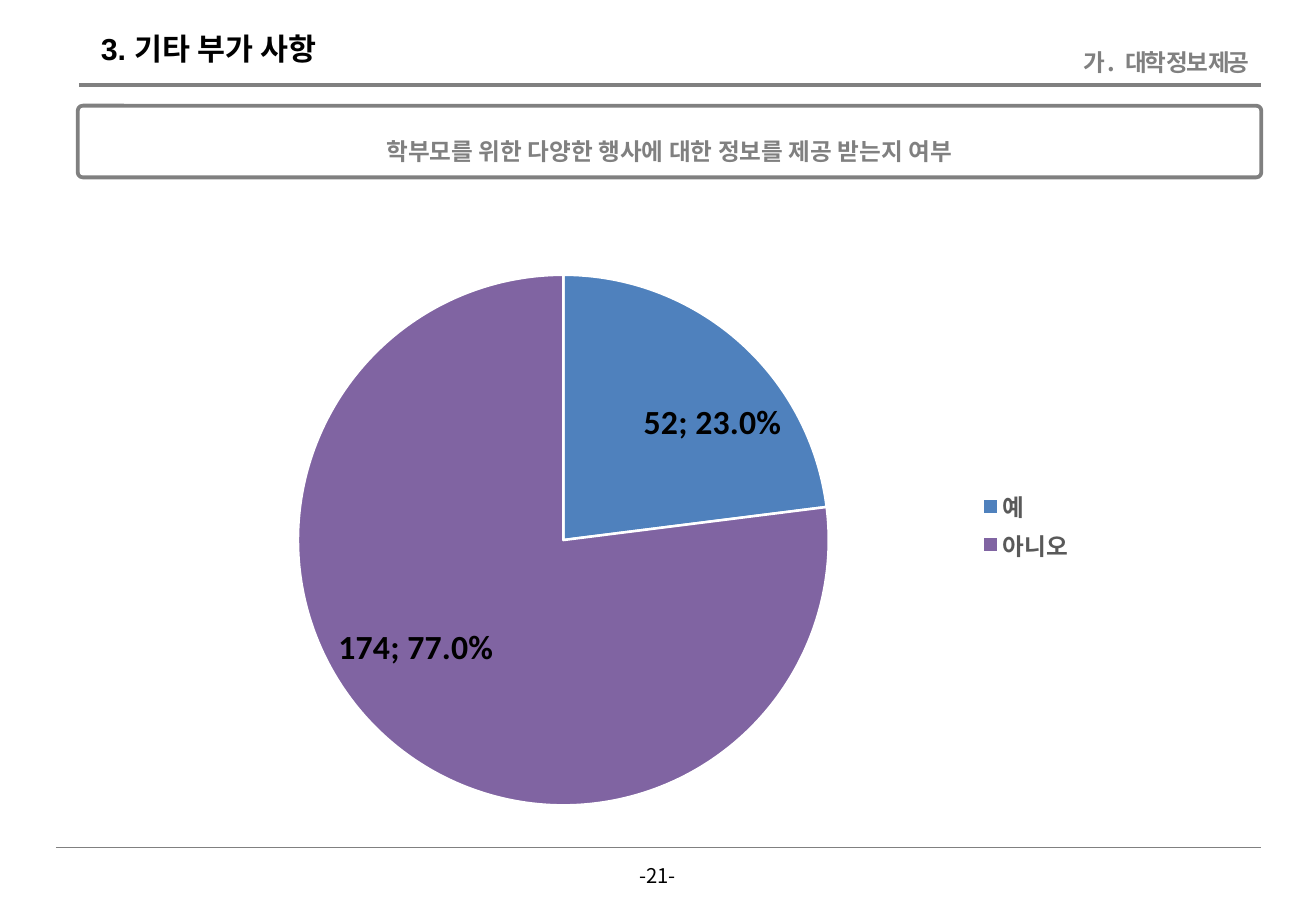
from lxml import etree
from pptx import Presentation
from pptx.chart.data import CategoryChartData
from pptx.dml.color import RGBColor
from pptx.enum.chart import XL_CHART_TYPE, XL_LABEL_POSITION, XL_LEGEND_POSITION
from pptx.enum.shapes import MSO_CONNECTOR, MSO_SHAPE
from pptx.enum.text import MSO_ANCHOR, PP_ALIGN
from pptx.oxml import parse_xml
from pptx.oxml.ns import nsdecls, qn
from pptx.util import Inches, Pt

PIE = XL_CHART_TYPE.PIE
BEST_FIT = XL_LABEL_POSITION.BEST_FIT
RIGHT_LEGEND = XL_LEGEND_POSITION.RIGHT
STRAIGHT = MSO_CONNECTOR.STRAIGHT
ROUNDED = MSO_SHAPE.ROUNDED_RECTANGLE
MIDDLE = MSO_ANCHOR.MIDDLE
LEFT, CENTER, RIGHT = PP_ALIGN.LEFT, PP_ALIGN.CENTER, PP_ALIGN.RIGHT

WIDTH, HEIGHT = 10.83, 7.5
EDGE = 10.38  # right end of the rules and of the question box
KOREAN = "Noto Sans CJK KR"
GREY, BLACK, WHITE = "808080", "000000", "FFFFFF"


def color(hex_string):
    return RGBColor.from_string(hex_string)


def set_font(font, size, hex_string, name, bold=False):
    font.size, font.name, font.bold = Pt(size), name, bold
    font.color.rgb = color(hex_string)


def write(shape, runs, align, size, hex_string, name, bold=False, wrap=True):
    """Fill a shape with one paragraph of (text, letter spacing) runs."""
    tf = shape.text_frame
    tf.word_wrap, tf.vertical_anchor = wrap, MIDDLE
    p = tf.paragraphs[0]
    p.alignment = align
    set_font(p.font, size, hex_string, name, bold)
    for text, spacing in runs:
        r = p.add_run()
        r.text = text
        if spacing:
            r.font._element.set("spc", str(int(spacing * 100)))
    return p


def add_rule(s, left, top, weight):
    line = s.shapes.add_connector(STRAIGHT, Inches(left), Inches(top), Inches(EDGE), Inches(top))
    line.line.color.rgb = color(GREY)
    line.line.width = Pt(weight)
    etree.SubElement(line._element.spPr, qn("a:effectLst"))


def add_header(s, left, top, width, height):
    title = s.shapes.title
    title.left, title.top = Inches(left + 0.08), Inches(top)
    title.width, title.height = Inches(2.2), Inches(0.4)
    write(title, [("3. 기타 부가 사항", 0)], LEFT, 18, BLACK, "Arial", True)
    section = s.shapes.add_textbox(Inches(left + width - 2.01), Inches(top + 0.14),
                                   Inches(2.01), Inches(0.34))
    write(section, [("가. ", 1.5), ("대학 정보 제공", -1.5)], RIGHT, 14, GREY, KOREAN, True)
    add_rule(s, left, top + height, 2)


def add_question(s, left, top, width, height):
    sp = s.shapes.add_shape(ROUNDED, Inches(left), Inches(top), Inches(width), Inches(height))
    sp.adjustments[0] = 0.07
    sp.shadow.inherit = False
    sp.fill.background()
    sp.line.color.rgb = color(GREY)
    sp.line.width = Pt(2.25)
    p = write(sp, [("학부모를 위한 다양한 행사에 대한 정보를 제공 받는지 여부", 0)],
              CENTER, 14, GREY, KOREAN, True)
    p.line_spacing = 1.7


def set_layout(parent, x, y, w, h, inner=False):
    """Place a chart part by shares of the chart's size."""
    target = '<c:layoutTarget val="inner"/>' if inner else ""
    sizes = "".join(f'<c:{tag} val="{val}"/>' for tag, val in zip("xywh", (x, y, w, h)))
    layout = parse_xml(f'<c:layout {nsdecls("c")}><c:manualLayout>{target}'
                       '<c:xMode val="edge"/><c:yMode val="edge"/>'
                       f'{sizes}</c:manualLayout></c:layout>')
    for old in parent.findall(qn("c:layout")):
        parent.remove(old)
    parent.insert(1 if parent.tag == qn("c:legend") else 0, layout)


def add_pie(s, left, top, width, height):
    data = CategoryChartData()
    data.categories = ["예", "아니오"]
    data.add_series("Series 1", (52, 174))
    chart = s.shapes.add_chart(PIE, Inches(left), Inches(top), Inches(width),
                               Inches(height), data).chart
    chart.has_title = False
    set_font(chart.font, 10, BLACK, "Calibri")
    plot = chart.plots[0]
    plot.vary_by_categories = True
    for i, fill in enumerate(("4F81BD", "8064A2")):
        fmt = plot.series[0].points[i].format
        fmt.fill.solid()
        fmt.fill.fore_color.rgb = color(fill)
        fmt.line.color.rgb = color(WHITE)
        fmt.line.width = Pt(1.5)

    # Count and share on each slice
    labels = plot.series[0].data_labels
    labels.show_value = labels.show_percentage = True
    labels.number_format, labels.number_format_is_linked = "0.0%", False
    labels.position = BEST_FIT
    set_font(labels.font, 20, BLACK, "Calibri", True)
    separator = etree.Element(qn("c:separator"))
    separator.text = "; "
    labels._element.find(qn("c:showBubbleSize")).addnext(separator)

    # Legend and plot area
    chart.has_legend = True
    chart.legend.position = RIGHT_LEGEND
    chart.legend.include_in_layout = False
    set_font(chart.legend.font, 14, "595959", "Calibri", True)
    set_layout(chart.legend._element, 0.74, 0.42, 0.1, 0.14)
    set_layout(chart._chartSpace.chart.plotArea, 0.2, 0.06, 0.43, 0.91, inner=True)


def add_footer(s, left, top):
    add_rule(s, left, top, 0.5)
    number = s.shapes.add_textbox(Inches(WIDTH / 2 - 0.28), Inches(top + 0.08),
                                  Inches(0.55), Inches(0.3))
    write(number, [("-21-", 0)], CENTER, 12, BLACK, KOREAN, wrap=False)


def main():
    prs = Presentation()
    prs.slide_width, prs.slide_height = Inches(WIDTH), Inches(HEIGHT)
    s = prs.slides.add_slide(prs.slide_layouts[5])
    add_header(s, 0.65, 0.2, EDGE - 0.65, 0.5)
    add_question(s, 0.64, 0.87, EDGE - 0.64, 0.59)
    add_pie(s, 0.42, 1.97, 10.16, 4.81)
    add_footer(s, 0.46, 6.98)
    prs.save("out.pptx")


if __name__ == "__main__":
    main()
